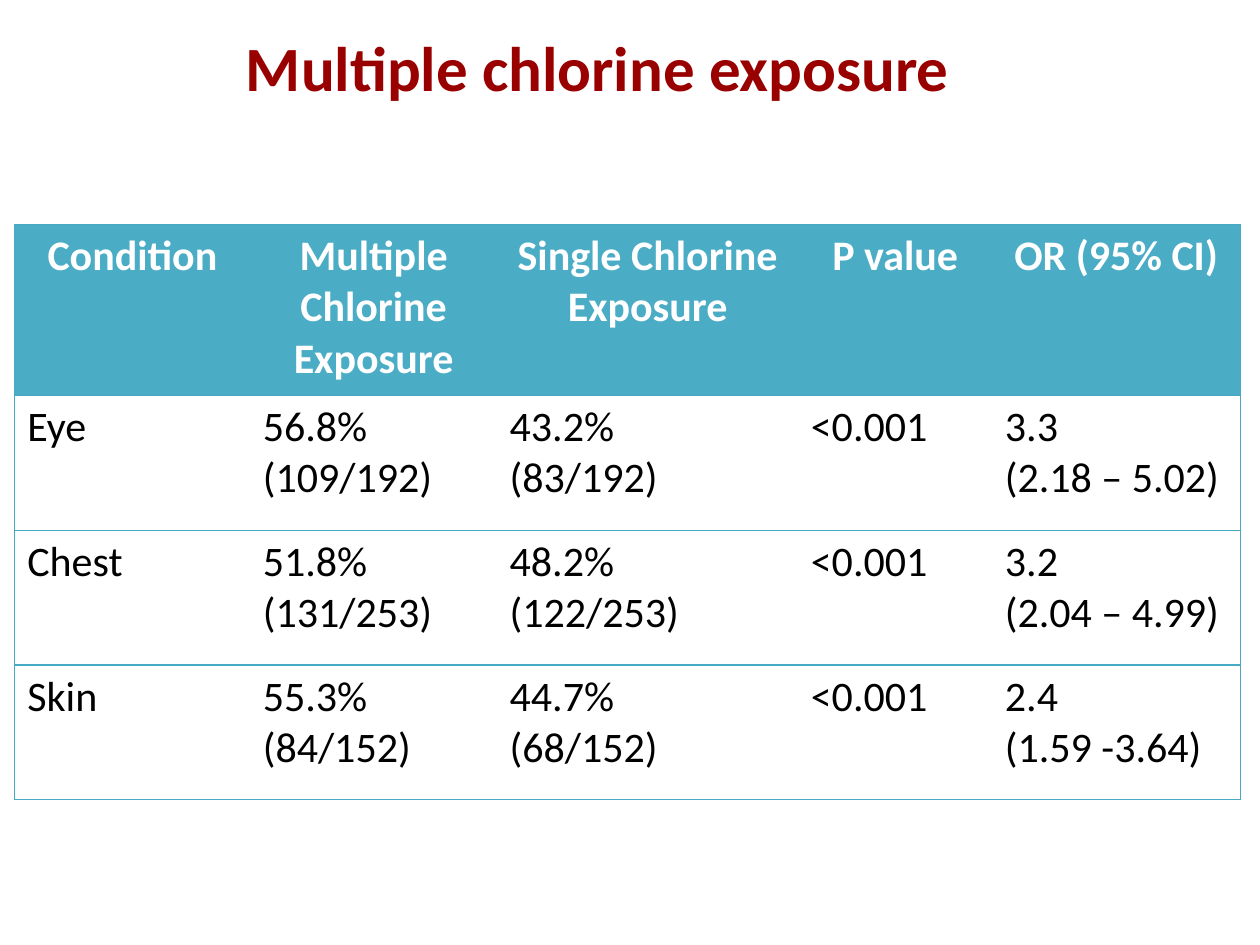
from dataclasses import dataclass

from lxml.etree import SubElement
from pptx import Presentation
from pptx.dml.color import RGBColor as Color
from pptx.enum.text import MSO_ANCHOR as Anchor, PP_ALIGN as Align
from pptx.oxml.ns import qn
from pptx.util import Pt

TITLE = "Multiple chlorine exposure "  # the closing space shifts the centred text
HEADER = ["Condition", "Multiple Chlorine Exposure", "Single Chlorine Exposure",
          "P value", "OR (95% CI)"]
ROWS = [
    ["Eye", "56.8% (109/192)", "43.2%\n(83/192)", "<0.001", "3.3\n(2.18 – 5.02)"],
    ["Chest", "51.8% (131/253)", "48.2%\n(122/253)", "<0.001", "3.2\n(2.04 – 4.99)"],
    ["Skin", "55.3%\n(84/152)", "44.7%\n(68/152)", "<0.001", "2.4\n(1.59 -3.64)"],
]
COLUMN_WIDTHS = [134.6, 141.1, 172.1, 110.9, 141.6]
HEADER_HEIGHT, ROW_HEIGHT = 97.8, 77


@dataclass(frozen=True)
class Theme:
    font: str = "Calibri"
    title_size: int = 36
    table_size: int = 24
    title: str = "990000"
    header_text: str = "FFFFFF"
    body_text: str = "000000"
    header_fill: str = "4BACC6"
    border: str = "46AAC5"
    border_width: float = 0.75


THEME = Theme()


def write(text_frame, text, size, color, bold, alignment):
    text_frame.text = text
    for paragraph in text_frame.paragraphs:
        paragraph.alignment = alignment
        for run in paragraph.runs:
            run.font.name = THEME.font
            run.font.size = Pt(size)
            run.font.bold = bold
            run.font.color.rgb = Color.from_string(color)


def set_borders(cell, visible_sides):
    """Draw the given sides (letters from LRTB) and clear the others."""
    properties = cell._tc.get_or_add_tcPr()
    for side in "LRTB":
        line = SubElement(properties, qn(f"a:ln{side}"), w=str(Pt(THEME.border_width)))
        if side in visible_sides:
            fill = SubElement(line, qn("a:solidFill"))
            SubElement(fill, qn("a:srgbClr"), val=THEME.border)
        else:
            SubElement(line, qn("a:noFill"))


def add_title(slide):
    box = slide.shapes.add_textbox(Pt(64.8), Pt(9.4), Pt(561.6), Pt(56.9))
    box.text_frame.word_wrap = True
    box.text_frame.vertical_anchor = Anchor.MIDDLE
    write(box.text_frame, TITLE, THEME.title_size, THEME.title, True, Align.CENTER)


def add_exposure_table(slide):
    content = [HEADER] + ROWS
    heights = [HEADER_HEIGHT] + [ROW_HEIGHT] * len(ROWS)
    table = slide.shapes.add_table(
        len(content), len(HEADER), Pt(8.4), Pt(128.2),
        Pt(sum(COLUMN_WIDTHS)), Pt(sum(heights))).table
    table.horz_banding = False
    for column, width in zip(table.columns, COLUMN_WIDTHS):
        column.width = Pt(width)
    for row, height in zip(table.rows, heights):
        row.height = Pt(height)

    last_column = len(HEADER) - 1
    for row_index, texts in enumerate(content):
        is_header = row_index == 0
        for column_index, text in enumerate(texts):
            cell = table.cell(row_index, column_index)
            set_borders(cell, "TB" + {0: "L", last_column: "R"}.get(column_index, ""))
            if is_header:
                cell.fill.solid()
                cell.fill.fore_color.rgb = Color.from_string(THEME.header_fill)
            else:
                cell.fill.background()
            write(cell.text_frame, text, THEME.table_size,
                  THEME.header_text if is_header else THEME.body_text,
                  is_header, Align.CENTER if is_header else Align.LEFT)


def main():
    presentation = Presentation()
    presentation.slide_width, presentation.slide_height = Pt(720), Pt(540)
    slide = presentation.slides.add_slide(presentation.slide_layouts[6])
    add_title(slide)
    add_exposure_table(slide)
    presentation.save("out.pptx")


if __name__ == "__main__":
    main()
